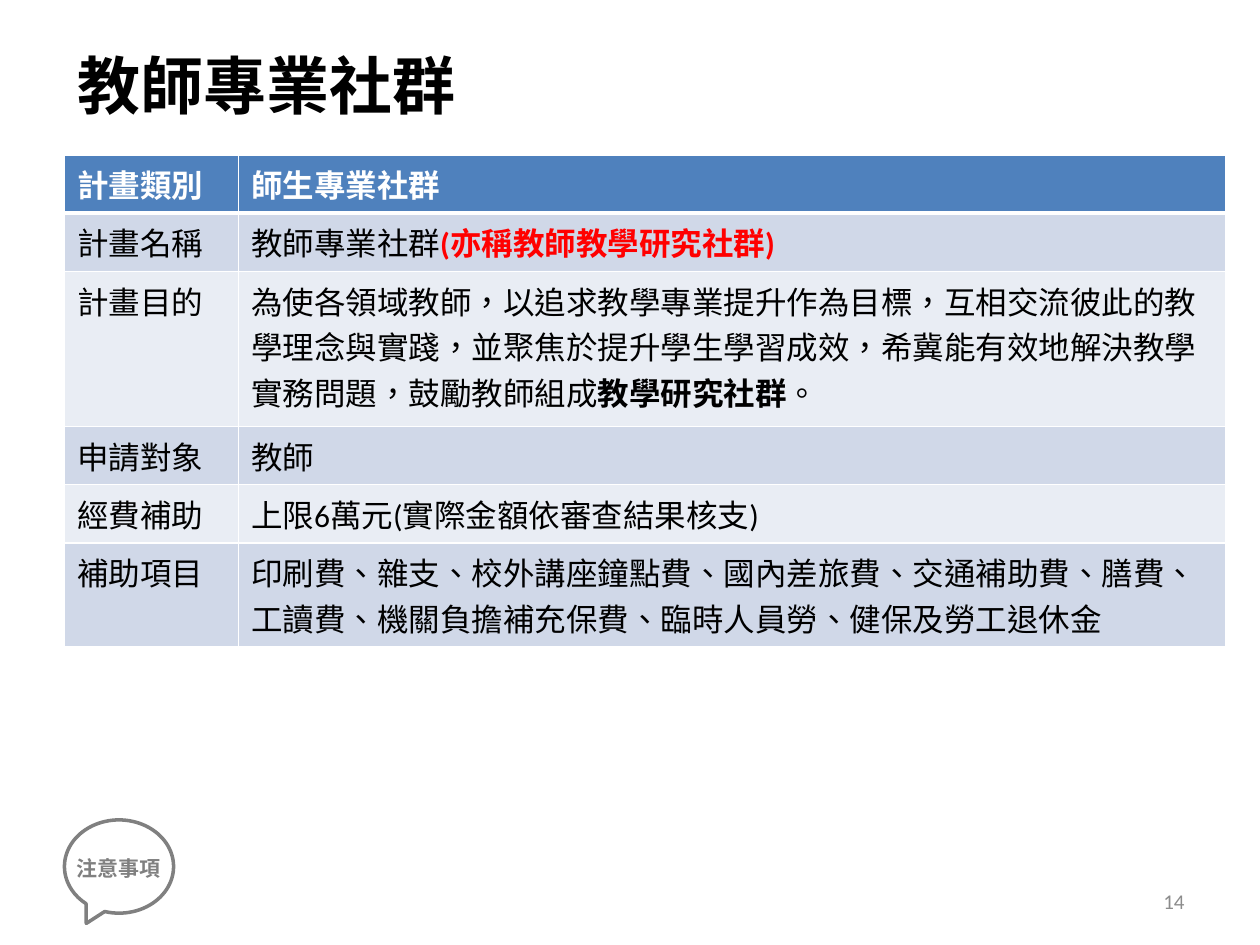
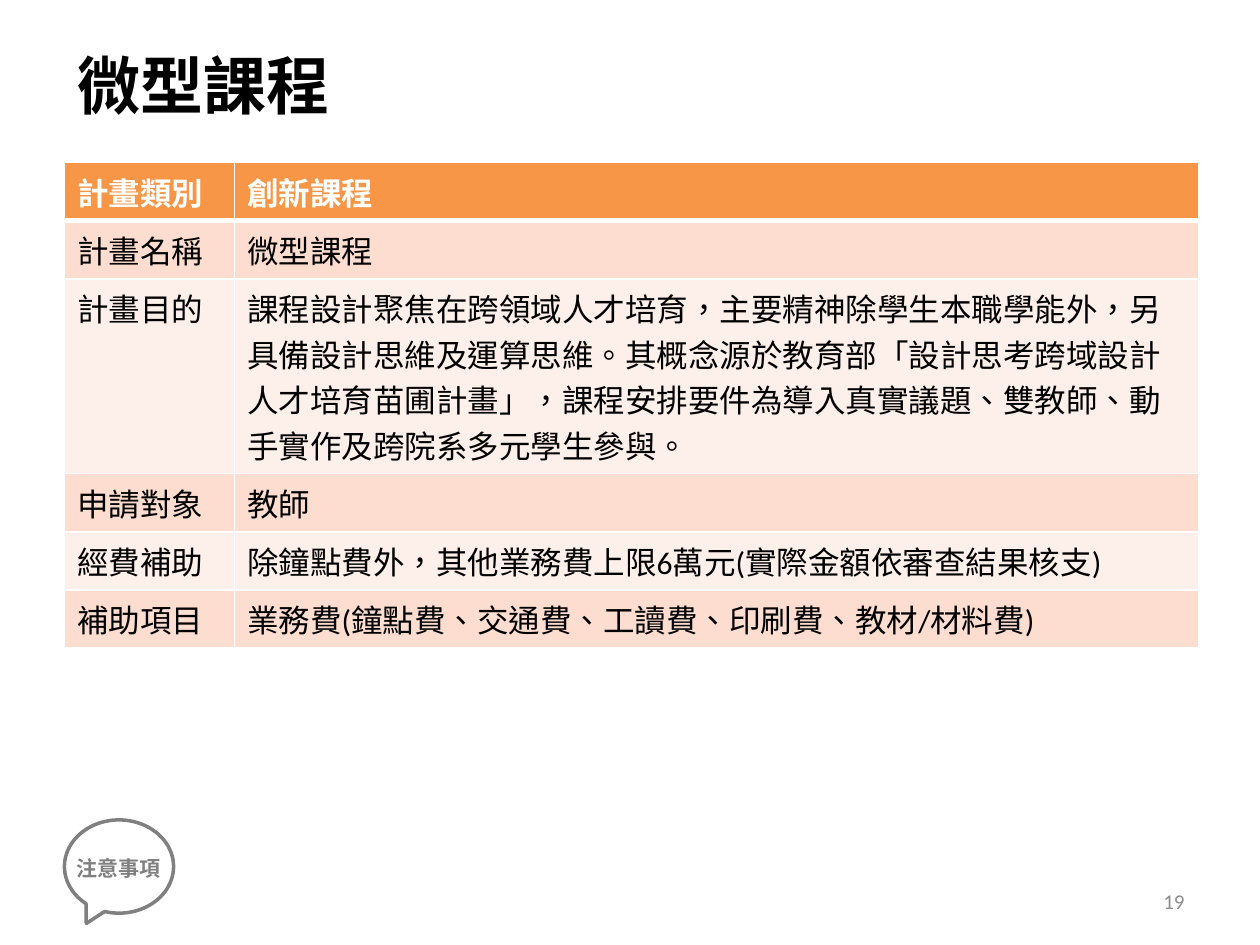
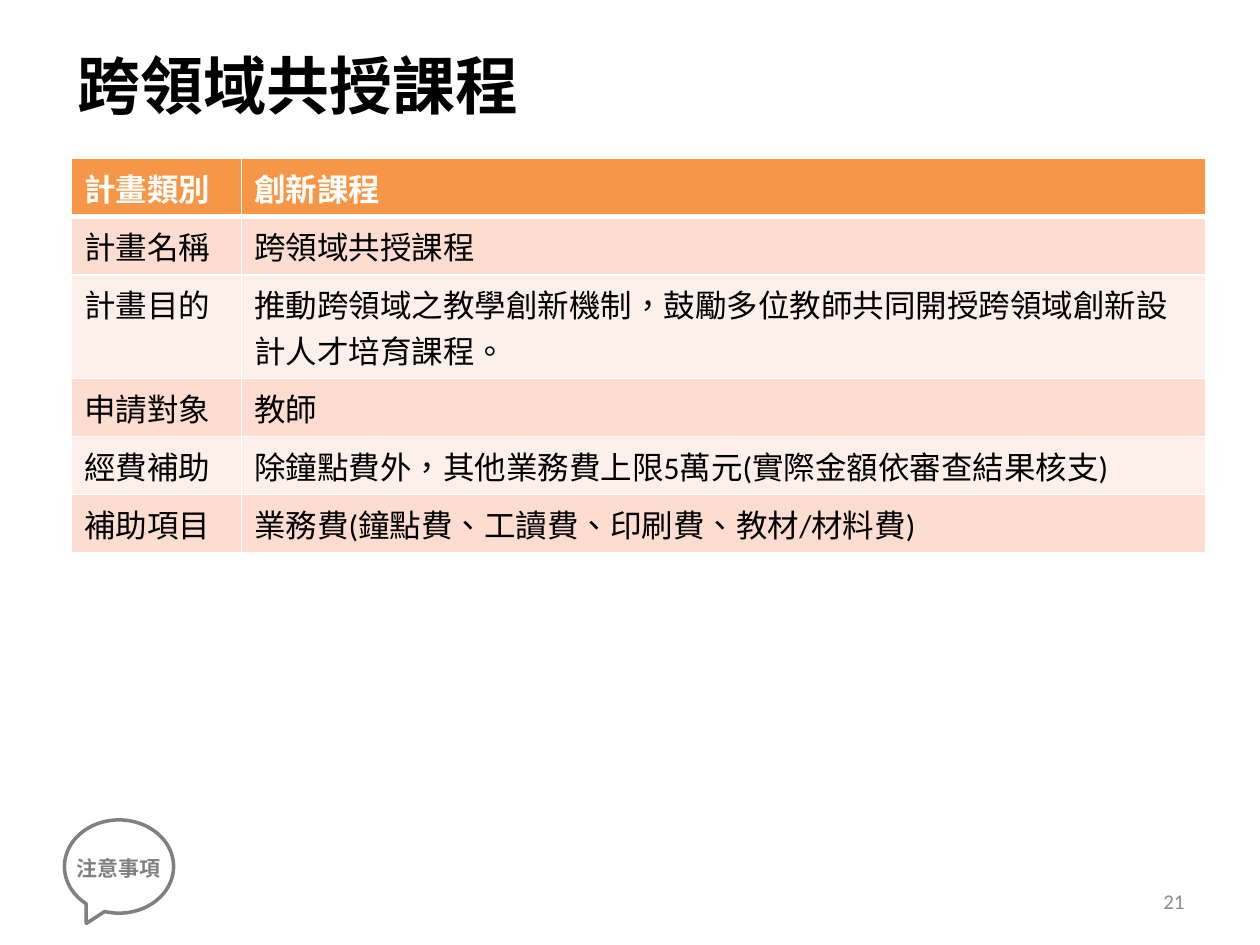
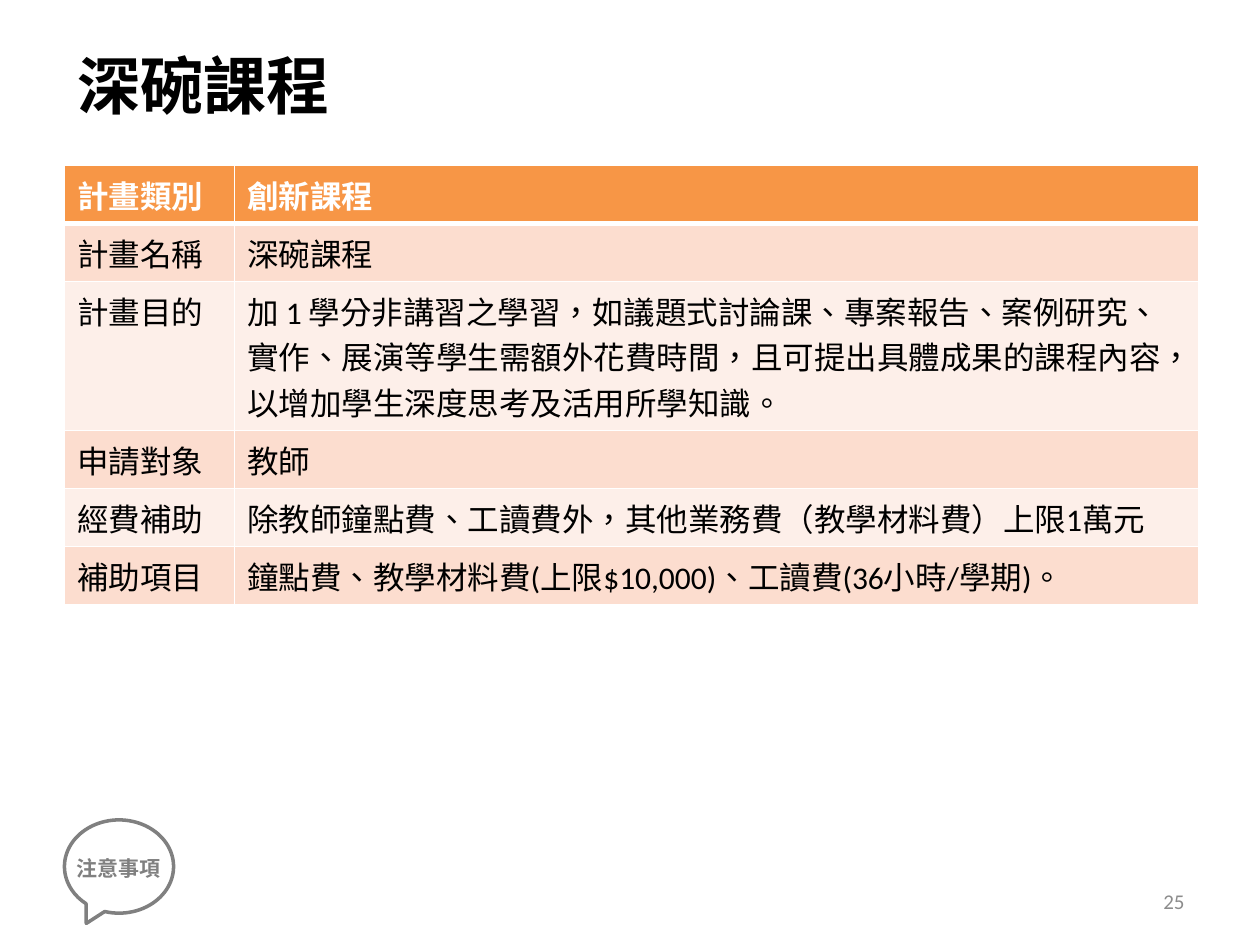
"""Build four slides that each summarise one teaching grant scheme in a table."""
from dataclasses import dataclass

from lxml import etree
from pptx import Presentation
from pptx.dml.color import RGBColor
from pptx.enum import lang, shapes, text
from pptx.oxml import ns
from pptx.util import Cm, Pt

BLACK = RGBColor(0x00, 0x00, 0x00)
WHITE = RGBColor(0xFF, 0xFF, 0xFF)
RED = RGBColor(0xFF, 0x00, 0x00)
GRAY = RGBColor(0x80, 0x80, 0x80)
PAGE_GRAY = RGBColor(0x8C, 0x8C, 0x8C)
BLUE = RGBColor(0x4F, 0x81, 0xBD)
BLUE_MID = RGBColor(0xD0, 0xD8, 0xE8)
BLUE_PALE = RGBColor(0xE9, 0xED, 0xF4)
ORANGE = RGBColor(0xF7, 0x96, 0x46)
ORANGE_MID = RGBColor(0xFC, 0xDD, 0xCF)
ORANGE_PALE = RGBColor(0xFD, 0xEF, 0xE9)

FONT = "Calibri"
LABEL_FONT = "Noto Sans CJK SC"
LEFT = 1.3
LABELS = ("計畫類別", "計畫名稱", "計畫目的", "申請對象", "經費補助", "補助項目")
ROW_HEIGHT = 1.17
TWO_LINE_HEIGHT = 2.09


@dataclass(frozen=True)
class Run:
    """A stretch of text with its emphasis."""

    text: str
    bold: bool = False
    color: RGBColor = BLACK


@dataclass(frozen=True)
class Theme:
    """Colours and column widths of a grant table, in centimetres."""

    head: RGBColor
    bands: tuple[RGBColor, RGBColor]
    columns: tuple[float, float]


@dataclass(frozen=True)
class Scheme:
    """One slide: title, page number, table place and table values."""

    title: str
    page: int
    theme: Theme
    left: float
    top: float
    purpose_height: float
    category: str
    name: tuple[Run, ...]
    purpose: tuple[Run, ...]
    funding: str
    items: str
    items_height: float = ROW_HEIGHT
    applicant: str = "教師"

    def values(self) -> list[tuple[Run, ...]]:
        """Return the right-hand column from top to bottom."""
        return [(Run(self.category, True, WHITE),), self.name, self.purpose,
                (Run(self.applicant),), (Run(self.funding),), (Run(self.items),)]

    def heights(self) -> list[float]:
        """Return the row heights from top to bottom."""
        return [ROW_HEIGHT, ROW_HEIGHT, self.purpose_height,
                ROW_HEIGHT, ROW_HEIGHT, self.items_height]


COMMUNITY = Theme(BLUE, (BLUE_MID, BLUE_PALE), (3.51, 19.89))
COURSE = Theme(ORANGE, (ORANGE_MID, ORANGE_PALE), (3.43, 19.43))

SCHEMES = (
    Scheme(
        "教師專業社群", 14, COMMUNITY, LEFT, 3.12, 3.13, "師生專業社群",
        (Run("教師專業社群"), Run("(亦稱教師教學研究社群)", True, RED)),
        (Run("為使各領域教師，以追求教學專業提升作為目標，互相交流彼此的教學理念與實踐，"
             "並聚焦於提升學生學習成效，希冀能有效地解決教學實務問題，鼓勵教師組成"),
         Run("教學研究社群", True), Run("。")),
        "上限6萬元(實際金額依審查結果核支)",
        "印刷費、雜支、校外講座鐘點費、國內差旅費、交通補助費、膳費、"
        "工讀費、機關負擔補充保費、臨時人員勞、健保及勞工退休金",
        TWO_LINE_HEIGHT),
    Scheme(
        "微型課程", 19, COURSE, LEFT, 3.28, 3.93, "創新課程",
        (Run("微型課程"),),
        (Run("課程設計聚焦在跨領域人才培育，主要精神除學生本職學能外，"
             "另具備設計思維及運算思維。其概念源於教育部「設計思考跨域設計人才培育苗圃計畫」，"
             "課程安排要件為導入真實議題、雙教師、動手實作及跨院系多元學生參與。"),),
        "除鐘點費外，其他業務費上限6萬元(實際金額依審查結果核支)",
        "業務費(鐘點費、交通費、工讀費、印刷費、教材/材料費)"),
    Scheme(
        "跨領域共授課程", 21, COURSE, 1.44, 3.2, TWO_LINE_HEIGHT, "創新課程",
        (Run("跨領域共授課程"),),
        (Run("推動跨領域之教學創新機制，鼓勵多位教師共同開授跨領域創新設計人才培育課程。"),),
        "除鐘點費外，其他業務費上限5萬元(實際金額依審查結果核支)",
        "業務費(鐘點費、工讀費、印刷費、教材/材料費)"),
    Scheme(
        "深碗課程", 25, COURSE, LEFT, 3.33, 3.01, "創新課程",
        (Run("深碗課程"),),
        (Run("加 1 學分非講習之學習，如議題式討論課、專案報告、案例研究、"
             "實作、展演等學生需額外花費時間，且可提出具體成果的課程內容，"
             "以增加學生深度思考及活用所學知識。"),),
        "除教師鐘點費、工讀費外，其他業務費（教學材料費）上限1萬元",
        "鐘點費、教學材料費(上限$10,000)、工讀費(36小時/學期)。"),
)


def write(tf, runs: tuple[Run, ...], size: int, font: str = FONT) -> None:
    """Write runs into the first paragraph of a text frame."""
    p = tf.paragraphs[0]
    for run in runs:
        r = p.add_run()
        r.text = run.text
        formats = {"name": font, "size": Pt(size), "bold": run.bold,
                   "language_id": lang.MSO_LANGUAGE_ID.TRADITIONAL_CHINESE}
        for key, value in formats.items():
            setattr(r.font, key, value)
        r.font.color.rgb = run.color


def add_text(parent, box: tuple[float, ...], run: Run, size: int,
             font: str = FONT, anchor=text.MSO_ANCHOR.MIDDLE, align=None) -> None:
    """Add a wrapping text box with one run."""
    tf = parent.add_textbox(*map(Cm, box)).text_frame
    tf.word_wrap = True
    tf.vertical_anchor = anchor
    tf.paragraphs[0].alignment = align
    write(tf, (run,), size, font)


def add_borders(cell) -> None:
    """Give a header cell white borders with a heavier bottom edge."""
    tc_pr = cell._tc.get_or_add_tcPr()
    for i, (side, width) in enumerate({"L": 1, "R": 1, "T": 1, "B": 3}.items()):
        ln = etree.Element(ns.qn(f"a:ln{side}"), w=str(Pt(width)))
        fill = etree.SubElement(ln, ns.qn("a:solidFill"))
        etree.SubElement(fill, ns.qn("a:srgbClr"), val=str(WHITE))
        tc_pr.insert(i, ln)


def add_grant_table(s, scheme: Scheme) -> None:
    """Add the table of labels and values."""
    theme = scheme.theme
    heights = scheme.heights()
    box = (scheme.left, scheme.top, sum(theme.columns), sum(heights))
    table = s.shapes.add_table(len(LABELS), 2, *map(Cm, box)).table
    for column, width in zip(table.columns, theme.columns):
        column.width = Cm(width)
    for i, (label, value) in enumerate(zip(LABELS, scheme.values())):
        table.rows[i].height = Cm(heights[i])
        label_run = Run(label) if i else Run(label, True, WHITE)
        for j, runs in enumerate(((label_run,), value)):
            cell = table.cell(i, j)
            cell.fill.solid()
            cell.fill.fore_color.rgb = theme.bands[(i - 1) % 2] if i else theme.head
            write(cell.text_frame, runs, 18)
            if i == 0:
                add_borders(cell)


def add_notice(s) -> None:
    """Add the grouped speech bubble with its label."""
    group = s.shapes.add_group_shape().shapes
    add_text(group, (LEFT, 17.12, 2.24, 0.76), Run("注意事項", True, GRAY), 12,
             LABEL_FONT, text.MSO_ANCHOR.TOP)
    sp = group.add_shape(shapes.MSO_SHAPE.OVAL_CALLOUT,
                         *map(Cm, (LEFT, 16.53, 2.2, 1.88)))
    sp.shadow.inherit = False
    sp.adjustments[0], sp.adjustments[1] = -0.3, 0.61
    sp.fill.background()
    sp.line.color.rgb = GRAY
    sp.line.width = Pt(2)


def add_scheme(prs, scheme: Scheme) -> None:
    """Add one complete scheme slide."""
    s = prs.slides.add_slide(prs.slide_layouts[6])
    add_grant_table(s, scheme)
    add_text(s.shapes, (1.31, 0.72, 16.03, 1.96), Run(scheme.title, True), 36)
    add_text(s.shapes, (18.21, 17.65, 5.92, 1.02), Run(str(scheme.page), color=PAGE_GRAY),
             12, align=text.PP_ALIGN.RIGHT)
    add_notice(s)


def main() -> None:
    """Build and save the deck."""
    prs = Presentation()
    prs.slide_width, prs.slide_height = Cm(25.4), Cm(19.05)
    for scheme in SCHEMES:
        add_scheme(prs, scheme)
    prs.save("out.pptx")


if __name__ == "__main__":
    main()
